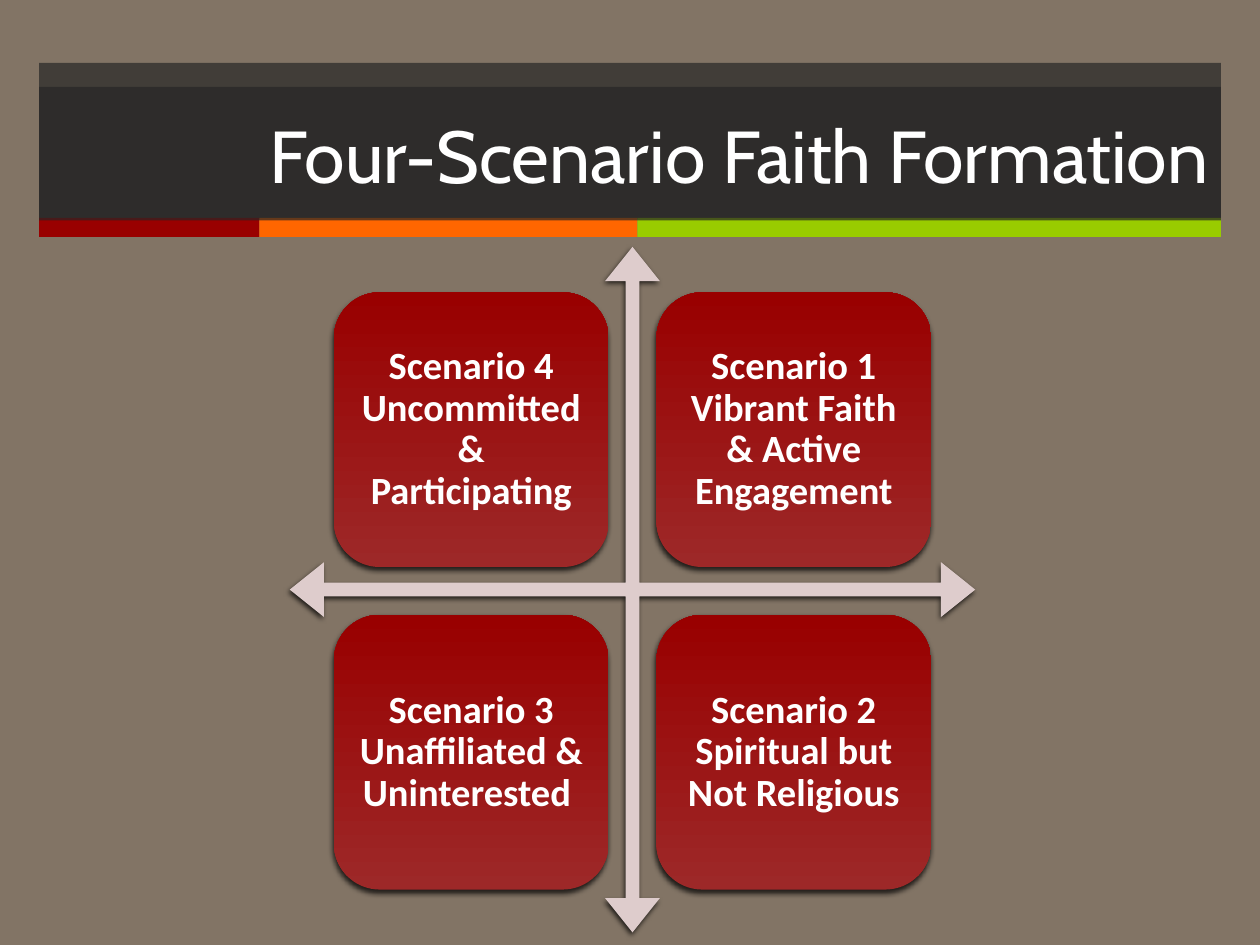
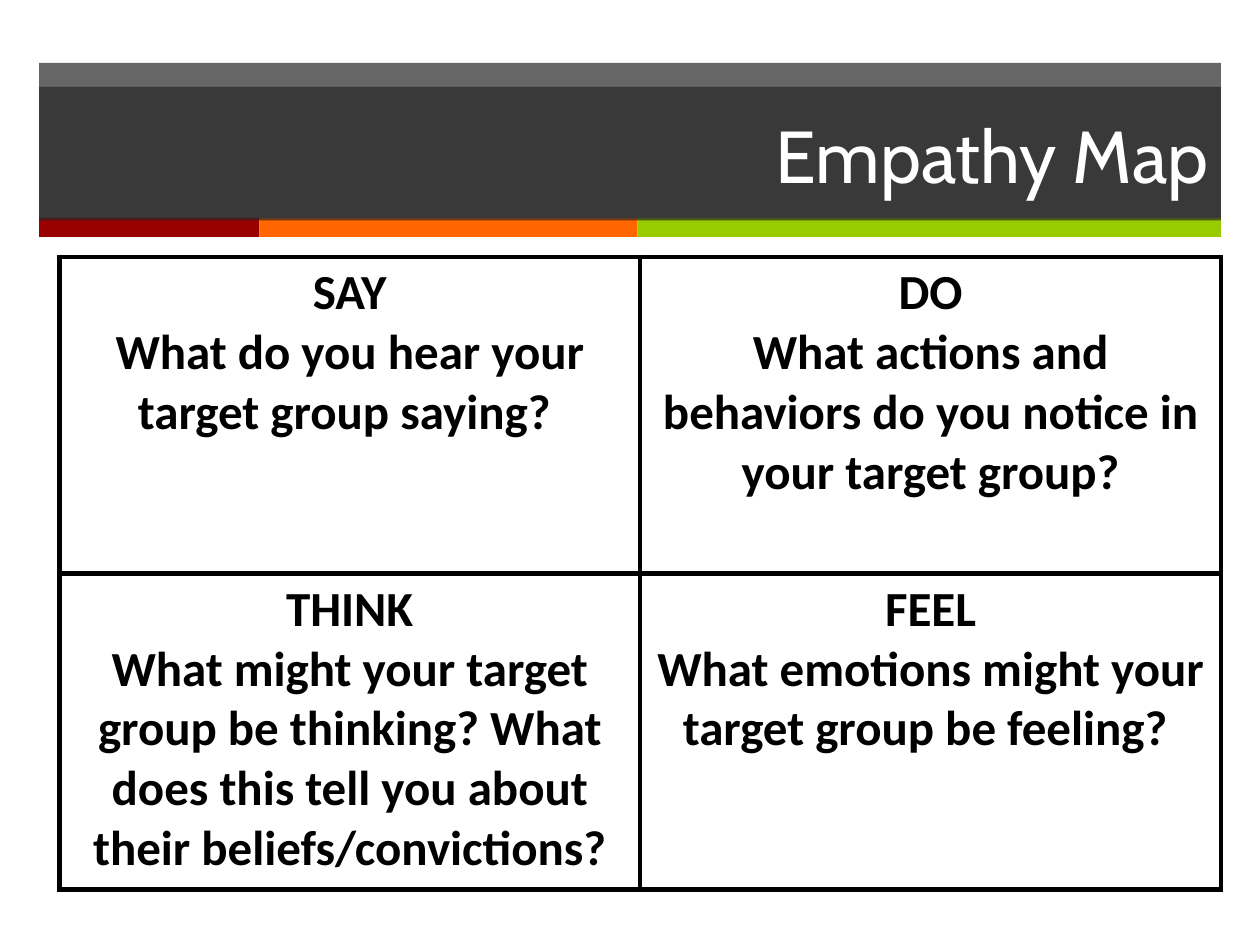
"""Build two slides: a four-scenario matrix and an empathy map."""
from dataclasses import dataclass

from lxml import etree
from pptx import Presentation
from pptx import util as u
from pptx.dml.color import RGBColor
from pptx.enum import shapes, text
from pptx.oxml import ns


@dataclass(frozen=True)
class Theme:
    """Colours, fonts and type sizes of the deck."""
    band: str = "262626"
    stripes: tuple = ("990000", "FF6600", "99CC00")
    taupe: str = "827465"
    arrow: str = "DECCCC"
    tile_top: str = "990000"
    tile_bottom: str = "9D2828"
    white: str = "FFFFFF"
    black: str = "000000"
    title_font: str = "Cabin"
    body_font: str = "Calibri"
    title_size: int = 42
    tile_size: int = 22
    cell_size: int = 28


THEME = Theme()
BAND_LEFT, BAND_WIDTH = 0.31, 9.38
STRIPE_WIDTHS = (1.75, 3, 4.63)
SCENARIOS = (
    ("Scenario 4 Uncommitted & Participating", "Scenario 1 Vibrant Faith & Active Engagement"),
    ("Scenario 3 Unaffiliated & Uninterested ", "Scenario 2 Spiritual but Not Religious"),
)
EMPATHY = (
    (("SAY", "What do you hear your target group saying? "),
     ("DO", "What actions and behaviors do you notice in your target group?")),
    (("THINK", "What might your target group be thinking? "
               "What does this tell you about their beliefs/convictions?"),
     ("FEEL", "What emotions might your target group be feeling? ")),
)


def rgb(code):
    """Turn a hex code into a colour."""
    return RGBColor.from_string(code)


def add_xml(parent, tag, **attributes):
    """Add a drawing element below parent."""
    return etree.SubElement(parent, ns.qn(tag), {k: str(v) for k, v in attributes.items()})


def paint(fill, colour, alpha=None):
    """Give a fill one colour, with an optional opacity in percent."""
    fill.solid()
    fill.fore_color.rgb = rgb(colour)
    if alpha is not None:
        colour_node = fill._xPr.find(".//" + ns.qn("a:srgbClr"))
        add_xml(colour_node, "a:alpha", val=alpha * 1000)


def write(frame, *lines, font, size, colour, bold=False,
          align=text.PP_ALIGN.CENTER, spacing=None):
    """Write lines as formatted paragraphs into a text frame."""
    frame.word_wrap = True
    for index, line in enumerate(lines):
        paragraph = frame.add_paragraph() if index else frame.paragraphs[0]
        paragraph.alignment = align
        paragraph.line_spacing = spacing
        run = paragraph.add_run()
        run.text = line
        run.font.name = font
        run.font.size = u.Pt(size)
        run.font.bold = bold
        run.font.color.rgb = rgb(colour)


def add_plain(slide, kind, left, top, width, height):
    """Add a preset shape without line or shadow."""
    shape = slide.shapes.add_shape(kind, *map(u.Inches, (left, top, width, height)))
    shape.line.fill.background()
    shape.shadow.inherit = False
    return shape


def cast_shadow(shape):
    """Give a shape the soft shadow of the diagram."""
    effects = shape._element.spPr.find(ns.qn("a:effectLst"))
    shadow = add_xml(effects, "a:outerShdw", blurRad=u.Pt(3), dist=u.Pt(2),
                     dir=110 * 60000, rotWithShape=0)
    add_xml(add_xml(shadow, "a:srgbClr", val=THEME.black), "a:alpha", val=75000)


def move_to_layout(layout, parts):
    """Place parts behind everything else on the layout."""
    for index, part in enumerate(parts):
        element = part._element
        element.nvSpPr.cNvPr.set("id", str(100 + index))
        layout.shapes._spTree.insert(2 + index, element)


def add_header(slide):
    """Draw the dark band and its stripes once, on the shared layout."""
    rect = shapes.MSO_SHAPE.RECTANGLE
    band = add_plain(slide, rect, BAND_LEFT, 0.5, BAND_WIDTH, 1.24)
    paint(band.fill, THEME.band, alpha=70)
    parts, left = [band], BAND_LEFT
    for width, colour in zip(STRIPE_WIDTHS, THEME.stripes):
        stripe = add_plain(slide, rect, left, 1.73, width, 0.15)
        paint(stripe.fill, colour)
        parts.append(stripe)
        left += width
    move_to_layout(slide.slide_layout, parts)


def add_slide(deck, heading, background):
    """Add a title-only slide with its heading and background."""
    slide = deck.slides.add_slide(deck.slide_layouts[5])
    paint(slide.background.fill, background)
    title = slide.shapes.title
    title.left, title.top = u.Inches(BAND_LEFT), u.Inches(0.69)
    title.width, title.height = u.Inches(BAND_WIDTH), u.Inches(1.06)
    paint(title.fill, THEME.band, alpha=70)
    title.text_frame.vertical_anchor = text.MSO_ANCHOR.MIDDLE
    write(title.text_frame, heading, font=THEME.title_font, size=THEME.title_size,
          colour=THEME.white, align=text.PP_ALIGN.RIGHT)
    return slide


def add_axes(slide):
    """Draw the four-way arrow behind the scenarios."""
    axes = add_plain(slide, shapes.MSO_SHAPE.QUAD_ARROW, 2.3, 1.96, 5.44, 5.44)
    for index, value in enumerate((0.02, 0.04, 0.05)):
        axes.adjustments[index] = value
    paint(axes.fill, THEME.arrow)
    cast_shadow(axes)


def add_scenario(slide, label, left, top):
    """Add one rounded scenario tile."""
    tile = add_plain(slide, shapes.MSO_SHAPE.ROUNDED_RECTANGLE, left, top, 2.18, 2.18)
    tile.fill.gradient()
    tile.fill.gradient_angle = 90
    for stop, colour in zip(tile.fill.gradient_stops, (THEME.tile_bottom, THEME.tile_top)):
        stop.color.rgb = rgb(colour)
    cast_shadow(tile)
    frame = tile.text_frame
    frame.margin_left = frame.margin_right = u.Inches(0.09)
    frame.margin_top = frame.margin_bottom = u.Inches(0.09)
    frame.vertical_anchor = text.MSO_ANCHOR.MIDDLE
    write(frame, label, font=THEME.body_font, size=THEME.tile_size,
          colour=THEME.white, bold=True, spacing=0.9)


def outline_cell(cell):
    """Draw black borders around a table cell."""
    properties = cell._tc.get_or_add_tcPr()
    for index, side in enumerate(("a:lnL", "a:lnR", "a:lnT", "a:lnB")):
        border = add_xml(properties, side, w=u.Pt(3))
        add_xml(add_xml(border, "a:solidFill"), "a:srgbClr", val=THEME.black)
        properties.insert(index, border)


def add_empathy_map(slide):
    """Add the two-by-two table of questions."""
    frame = slide.shapes.add_table(2, 2, *map(u.Inches, (0.47, 2.04, 9.22, 5.02)))
    grid = frame.table
    grid.first_row = grid.horz_banding = False
    for row, questions in enumerate(EMPATHY):
        for column, lines in enumerate(questions):
            cell = grid.cell(row, column)
            paint(cell.fill, THEME.white)
            outline_cell(cell)
            write(cell.text_frame, *lines, font=THEME.body_font,
                  size=THEME.cell_size, colour=THEME.black, bold=True)


def main():
    """Build and save the deck."""
    deck = Presentation()
    deck.slide_width, deck.slide_height = u.Inches(10), u.Inches(7.5)

    matrix = add_slide(deck, "Four-Scenario Faith Formation", THEME.taupe)
    add_header(matrix)
    add_axes(matrix)
    for row, labels in enumerate(SCENARIOS):
        for column, label in enumerate(labels):
            add_scenario(matrix, label, 2.65 + column * 2.56, 2.32 + row * 2.56)

    add_empathy_map(add_slide(deck, "Empathy Map", THEME.white))
    deck.save("out.pptx")


if __name__ == "__main__":
    main()
